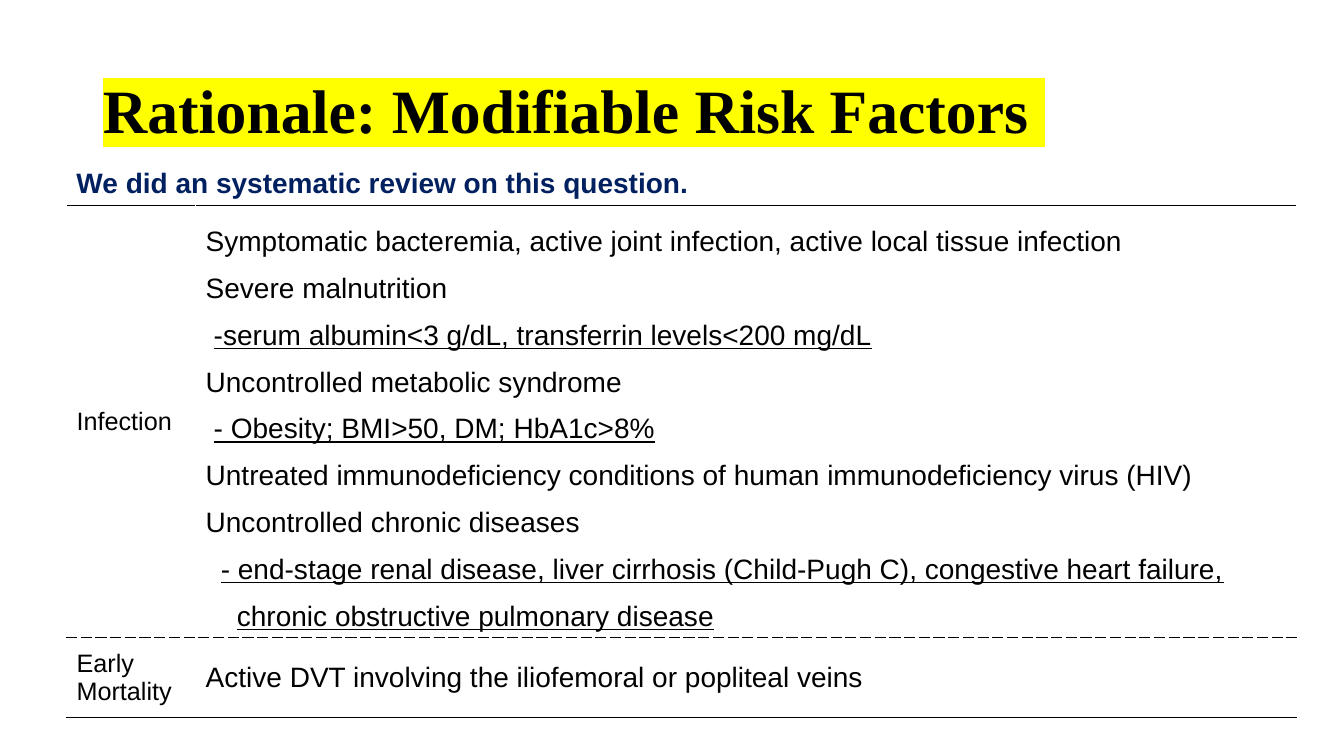
from lxml import etree
from pptx import Presentation
from pptx.dml.color import RGBColor
from pptx.enum import text
from pptx.oxml import ns
from pptx.util import Inches, Pt

FACTORS = [
    ("Symptomatic bacteremia, active joint infection, active local tissue infection", None),
    ("Severe malnutrition", None),
    ("-serum albumin<3 g/dL, transferrin levels<200 mg/dL", 0.08),
    ("Uncontrolled metabolic syndrome", None),
    ("- Obesity; BMI>50, DM; HbA1c>8%", 0.08),
    ("Untreated immunodeficiency conditions of human immunodeficiency virus (HIV)", None),
    ("Uncontrolled chronic diseases", None),
    ("- end-stage renal disease, liver cirrhosis (Child-Pugh C), congestive heart failure,", 0.15),
    ("chronic obstructive pulmonary disease", 0.31),
]
ROWS = [
    (["Infection"], FACTORS, 1.5, 4.28),
    (["Early", "Mortality"],
     [("Active DVT involving the iliofemoral or popliteal veins", None)], 1, 0.8),
]


def rgb(value):
    return RGBColor.from_string(value)


def style(p, size, color="000000", name="Arial", bold=False, underline=False):
    for r in p.runs:
        r.font.size = Pt(size)
        r.font.name = name
        r.font.bold = bold
        r.font.underline = underline
        r.font.color.rgb = rgb(color)


def highlight(r, color):
    mark = etree.Element(ns.qn("a:highlight"))
    etree.SubElement(mark, ns.qn("a:srgbClr"), val=color)
    r._r.get_or_add_rPr().find(ns.qn("a:solidFill")).addnext(mark)


def set_borders(cell, top, bottom):
    sides = [("lnL", "FFFFFF", "solid"), ("lnR", "FFFFFF", "solid"),
             ("lnT", "000000", top), ("lnB", "000000", bottom)]
    tcPr = cell._tc.get_or_add_tcPr()
    for i, (tag, color, dash) in enumerate(sides):
        ln = etree.Element(ns.qn("a:" + tag), w=str(Pt(1)))
        fill = etree.SubElement(ln, ns.qn("a:solidFill"))
        etree.SubElement(fill, ns.qn("a:srgbClr"), val=color)
        etree.SubElement(ln, ns.qn("a:prstDash"), val=dash)
        tcPr.insert(i, ln)


def fill_cell(cell, lines, size, spacing, top, bottom):
    cell.fill.background()
    cell.vertical_anchor = text.MSO_ANCHOR.MIDDLE
    set_borders(cell, top, bottom)
    tf = cell.text_frame
    tf.text = "\n".join(line for line, _ in lines)
    for p, (_, indent) in zip(tf.paragraphs, lines):
        p.line_spacing = float(spacing)
        if indent is not None:
            p._p.get_or_add_pPr().set("marL", str(Inches(indent)))
        style(p, size, underline=indent is not None)


def place_title(slide, left, top, width, height):
    sp = slide.shapes.title
    sp.left, sp.top, sp.width, sp.height = map(Inches, (left, top, width, height))
    tf = sp.text_frame
    tf.text = "Rationale: Modifiable Risk Factors "
    tf.vertical_anchor = text.MSO_ANCHOR.MIDDLE
    p = tf.paragraphs[0]
    p.alignment = text.PP_ALIGN.LEFT
    p.line_spacing = 0.9
    style(p, 44, name="Times New Roman", bold=True)
    highlight(p.runs[0], "FFFF00")


def add_lead(slide, left, top, width, height):
    sp = slide.shapes.add_textbox(*map(Inches, (left, top, width, height)))
    tf = sp.text_frame
    tf.word_wrap = False
    tf.auto_size = text.MSO_AUTO_SIZE.SHAPE_TO_FIT_TEXT
    tf.text = "We did an systematic review on this question."
    style(tf.paragraphs[0], 20, "002060", bold=True)


def add_factor_table(slide, left, top, width, label_width):
    height = sum(row[-1] for row in ROWS)
    frame = slide.shapes.add_table(len(ROWS), 2, *map(Inches, (left, top, width, height)))
    table = frame.table
    table.first_row = table.horz_banding = False
    table.columns[0].width = Inches(label_width)
    table.columns[1].width = Inches(width - label_width)
    for i, (label, factors, spacing, row_height) in enumerate(ROWS):
        table.rows[i].height = Inches(row_height)
        edges = ("sysDash" if i else "solid",
                 "solid" if i == len(ROWS) - 1 else "sysDash")
        fill_cell(table.cell(i, 0), [(line, None) for line in label], 18, 1, *edges)
        fill_cell(table.cell(i, 1), factors, 20, spacing, *edges)


def main():
    prs = Presentation()
    prs.slide_width, prs.slide_height = Inches(13.33), Inches(7.5)
    slide = prs.slides.add_slide(prs.slide_layouts[5])
    place_title(slide, 0.92, 0.4, 11.5, 1.45)
    add_factor_table(slide, 0.66, 2.04, 12.2, 1.28)
    add_lead(slide, 0.66, 1.59, 6.31, 0.44)
    prs.save("out.pptx")


if __name__ == "__main__":
    main()
